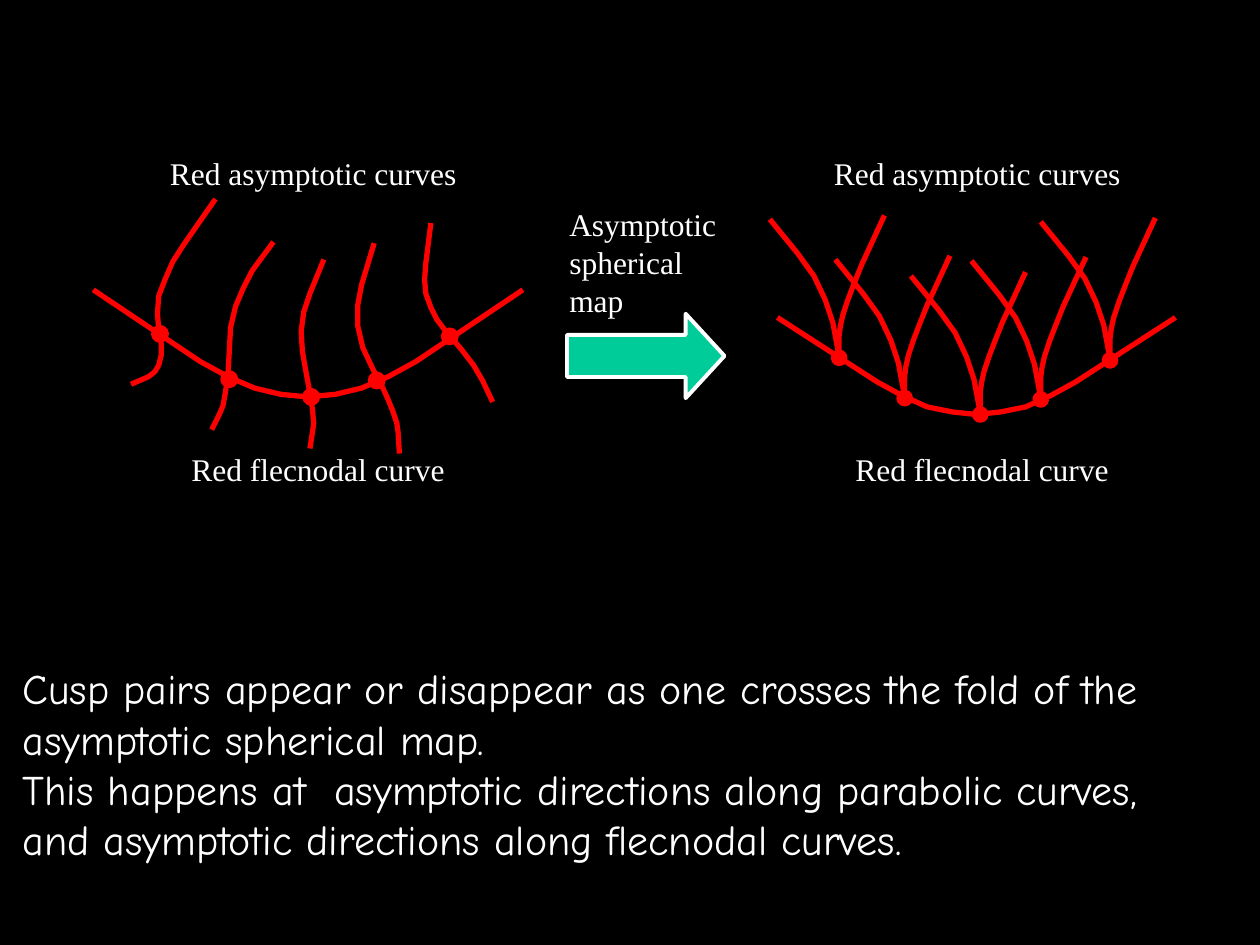
from dataclasses import dataclass

from pptx import Presentation
from pptx.dml.color import RGBColor
from pptx.enum.shapes import MSO_SHAPE
from pptx.enum.text import MSO_AUTO_SIZE
from pptx.util import Pt

PX = 9144  # EMU per px, at 100 px to the inch


@dataclass(frozen=True)
class Theme:
    back = RGBColor(0, 0, 0)
    text = RGBColor(255, 255, 255)
    curve = RGBColor(255, 0, 0)
    arrow = RGBColor(0, 204, 153)
    serif = "Times New Roman"
    comic = "Comic Neue"
    label = Pt(18)
    body = Pt(24)
    stroke = Pt(3)
    edge = Pt(2.25)


THEME = Theme()

# Asymptotic curves before the map, relative to their panel
STRANDS = [
    [(97, 41), (72, 77), (63, 91), (57, 105), (52, 118), (51, 132), (52, 144),
     (54, 156), (54, 165), (52, 173), (49, 178), (44, 182), (30, 188)],
    [(143, 75), (126, 98), (119, 112), (113, 126), (109, 143), (108, 162),
     (107, 179), (105, 194), (103, 205), (100, 212), (94, 224)],
    [(183, 89), (172, 116), (167, 131), (165, 146), (166, 162), (169, 179),
     (172, 195), (174, 208), (175, 219), (174, 226), (172, 239)],
    [(223, 76), (213, 109), (210, 125), (210, 142), (214, 159), (222, 176),
     (229, 189), (234, 200), (238, 210), (241, 219), (242, 226), (243, 243)],
    [(268, 60), (264, 92), (263, 105), (264, 116), (268, 127), (273, 137),
     (280, 146), (292, 160), (302, 173), (309, 185), (317, 202)],
]
NODES = [(53, 148), (108, 184), (173, 198), (225, 185), (283, 150)]
SAG = [(0, 113), (85, 170), (107, 182), (128, 191), (149, 196), (170, 198)]

# After the map: both branches start from each cusp
CUSPS = [(65, 167), (117, 199), (177, 212), (225, 200), (280, 169)]
BRANCHES = [
    [(0, 0), (0, -17), (1, -25), (3, -34), (7, -46), (12, -59), (18, -74), (36, -113)],
    [(0, -1), (-5, -28), (-11, -46), (-20, -65), (-33, -83), (-55, -110)],
]
FOLD = [(16, 135), (95, 186), (115, 197), (135, 206), (155, 210), (174, 212)]


def mirror(half, span):
    """Complete a curve whose mirrored x values add up to span."""
    return half + [(span - x, y) for x, y in reversed(half[:-1])]


def write(shapes, box, text, font, size):
    area = shapes.add_textbox(*(n * PX for n in box))
    frame = area.text_frame
    frame.word_wrap = False
    frame.auto_size = MSO_AUTO_SIZE.SHAPE_TO_FIT_TEXT
    frame.text = text
    for para in frame.paragraphs:
        for run in para.runs:
            run.font.name = font
            run.font.size = size
            run.font.color.rgb = THEME.text


def draw_curve(shapes, left, top, points):
    pen = shapes.build_freeform(*points[0], scale=PX)
    pen.add_line_segments(points[1:], close=False)
    curve = pen.convert_to_shape(left * PX, top * PX)
    curve.shadow.inherit = False
    curve.fill.background()
    curve.line.color.rgb = THEME.curve
    curve.line.width = THEME.stroke


def draw_dot(shapes, x, y, size):
    dot = shapes.add_shape(MSO_SHAPE.OVAL, round((x - size / 2) * PX),
                           round((y - size / 2) * PX), size * PX, size * PX)
    dot.shadow.inherit = False
    dot.fill.solid()
    dot.fill.fore_color.rgb = THEME.curve
    dot.line.color.rgb = THEME.curve
    dot.line.width = THEME.stroke


def add_panel(slide, left, top, curves, dots, size):
    """Group the curves and dots with a label above and one below."""
    shapes = slide.shapes.add_group_shape().shapes
    for points in curves:
        draw_curve(shapes, left, top, points)
    for x, y in dots:
        draw_dot(shapes, left + x, top + y, size)
    write(shapes, (left + 51, top, 248, 40), "Red asymptotic curves",
          THEME.serif, THEME.label)
    write(shapes, (left + 68, top + 235, 222, 40), "Red flecnodal curve",
          THEME.serif, THEME.label)


def add_map(slide, left, top):
    arrow = slide.shapes.add_shape(MSO_SHAPE.RIGHT_ARROW, (left + 8) * PX,
                                   (top + 91) * PX, 125 * PX, 67 * PX)
    arrow.adjustments[0] = 0.5
    arrow.adjustments[1] = 0.46
    arrow.shadow.inherit = False
    arrow.fill.solid()
    arrow.fill.fore_color.rgb = THEME.arrow
    arrow.line.color.rgb = THEME.text
    arrow.line.width = THEME.edge
    write(slide.shapes, (left, top, 137, 100), "Asymptotic\nspherical\nmap",
          THEME.serif, THEME.label)


def add_notes(slide, box):
    lines = [
        "Cusp pairs appear or disappear as one crosses the fold of the",
        "asymptotic spherical map.",
        "This happens at  asymptotic directions along parabolic curves,",
        "and asymptotic directions along flecnodal curves.",
    ]
    write(slide.shapes, box, "\n".join(lines), THEME.comic, THEME.body)


def main():
    deck = Presentation()
    deck.slide_width, deck.slide_height = 1000 * PX, 750 * PX
    slide = deck.slides.add_slide(deck.slide_layouts[6])
    slide.background.fill.solid()
    slide.background.fill.fore_color.rgb = THEME.back

    wings = [[(x + dx, y + dy) for dx, dy in branch]
             for x, y in CUSPS for branch in BRANCHES]
    add_panel(slide, 74, 117, STRANDS + [mirror(SAG, 341)], NODES, 10)
    add_map(slide, 442, 158)
    add_panel(slide, 601, 117, wings + [mirror(FOLD, 348)], CUSPS, 9)
    add_notes(slide, (8, 521, 990, 172))
    deck.save("out.pptx")


if __name__ == "__main__":
    main()
